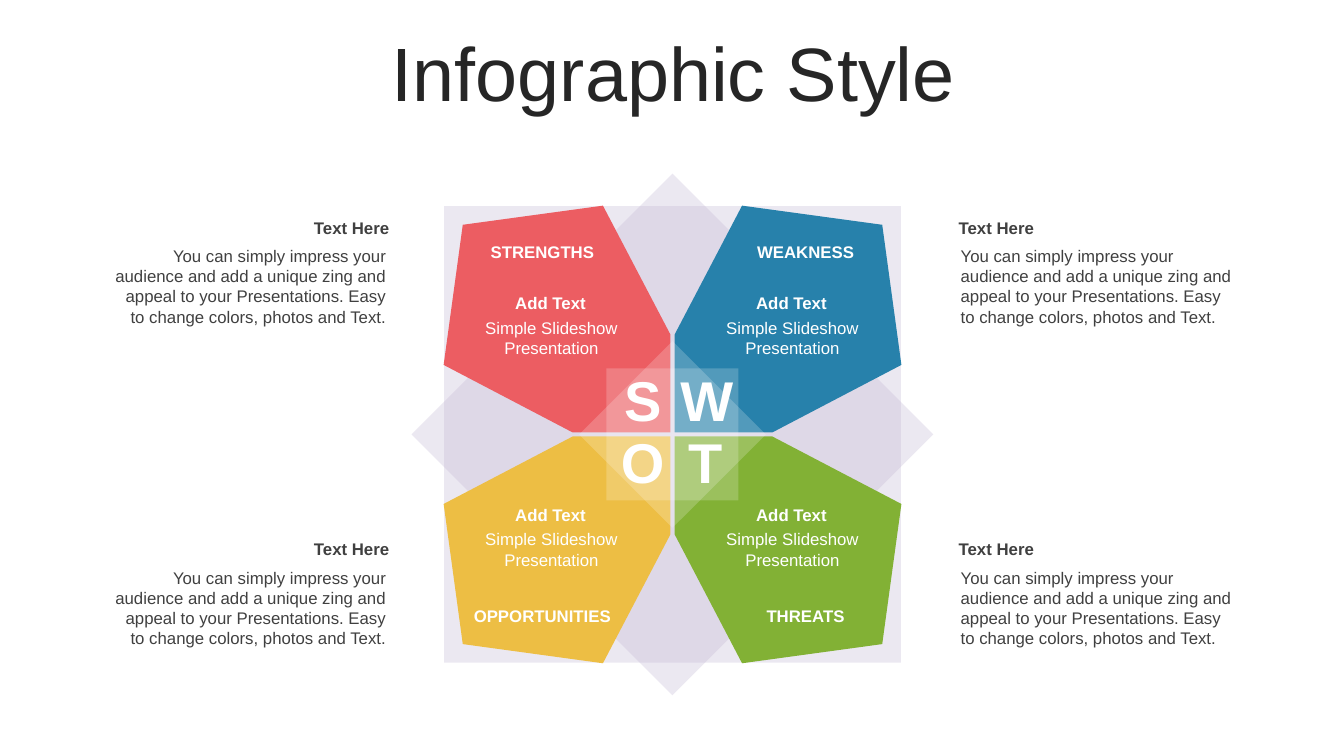
"""Build the SWOT infographic slide."""
from lxml import etree
from pptx import Presentation
from pptx.dml.color import RGBColor
from pptx.enum.shapes import MSO_SHAPE as Shape
from pptx.enum.text import MSO_ANCHOR as Anchor, MSO_AUTO_SIZE as AutoSize, PP_ALIGN as Align
from pptx.oxml.ns import qn
from pptx.util import Inches, Pt

TITLE = "Infographic Style"
CAPTION = ("Add Text", "Simple Slideshow Presentation")
SIDE_NOTE = (
    "Text Here",
    "You can simply impress your audience and add a unique zing and appeal "
    "to your Presentations. Easy to change colors, photos and Text.",
)
# letter, label, label center x, column, row, petal color
QUADRANTS = [
    ("S", "STRENGTHS", 5.38, 0, 0, "EC5D62"),
    ("W", "WEAKNESS", 7.99, 1, 0, "2781AB"),
    ("T", "THREATS", 7.99, 1, 1, "82B135"),
    ("O", "OPPORTUNITIES", 5.38, 0, 1, "EDBE44"),
]
PETAL = [(2.08, 2.08), (0.69, 2.27), (0.02, 0.99), (0.02, 0.02), (0.99, 0.02), (2.27, 0.69)]
CENTER_X, CENTER_Y = 6.67, 4.31
LABEL_TOPS = (2.35, 5.96)
LETTER_LEFTS, LETTER_TOPS = (6.03, 6.65), (3.58, 4.19)
CAPTION_LEFTS, CAPTION_TOPS = (4.52, 6.91), (2.86, 4.96)
NOTE_LEFTS, NOTE_TOPS = (0.95, 9.41), (2.11, 5.30)
NOTE_ALIGNS = (Align.RIGHT, Align.LEFT)
WHITE, LILAC, GRAY, INK = "FFFFFF", "C0B4D3", "404040", "262626"


def paint(shape, color, opacity=100):
    """Fill a shape with a flat color and no outline or shadow."""
    shape.shadow.inherit = False
    shape.line.fill.background()
    shape.fill.solid()
    shape.fill.fore_color.rgb = RGBColor.from_string(color)
    if opacity < 100:
        color_element = shape.fill._xPr.find(qn("a:solidFill"))[0]
        etree.SubElement(color_element, qn("a:alpha"), val=str(opacity * 1000))


def write(shape, text, size, color, align=Align.CENTER, bold=False):
    """Put one formatted paragraph in a shape."""
    frame = shape.text_frame
    frame.word_wrap = True
    frame.auto_size = AutoSize.NONE
    frame.text = text
    paragraph = frame.paragraphs[0]
    paragraph.alignment = align
    font = paragraph.runs[0].font
    font.name, font.size, font.bold = "Arial", Pt(size), bold
    font.color.rgb = RGBColor.from_string(color)
    return paragraph


def add_text(slide, left, top, width, height, *style, **options):
    """Add a formatted text box."""
    box = slide.shapes.add_textbox(Inches(left), Inches(top), Inches(width), Inches(height))
    write(box, *style, **options)


def add_star(slide, diamond_side, square_side, color, opacity):
    """Overlay a diamond and a square around the center."""
    for side, rotation in ((diamond_side, 315), (square_side, 0)):
        square = slide.shapes.add_shape(
            Shape.RECTANGLE, Inches(CENTER_X - side / 2), Inches(CENTER_Y - side / 2),
            Inches(side), Inches(side))
        square.rotation = rotation
        paint(square, color, opacity)


def add_petal(slide, column, row, color):
    """Mirror the petal outline into one quadrant."""
    points = [
        (Inches(CENTER_X + (2 * column - 1) * x), Inches(CENTER_Y + (2 * row - 1) * y))
        for x, y in PETAL
    ]
    builder = slide.shapes.build_freeform(*points[0])
    builder.add_line_segments(points[1:], close=True)
    paint(builder.convert_to_shape(), color)


def main():
    """Compose and save the slide."""
    presentation = Presentation()
    presentation.slide_width, presentation.slide_height = Inches(13.33), Inches(7.5)
    slide = presentation.slides.add_slide(presentation.slide_layouts[5])

    title = slide.shapes.title
    title.left, title.top = Inches(0.35), Inches(0.37)
    title.width, title.height = Inches(12.66), Inches(0.79)
    write(title, TITLE, 54, INK).line_spacing = 0.9
    title.text_frame.vertical_anchor = Anchor.MIDDLE

    add_star(slide, 3.66, 4.53, LILAC, 30)
    for _, _, _, column, row, color in QUADRANTS:
        add_petal(slide, column, row, color)
    add_star(slide, 1.31, 1.31, WHITE, 20)

    heading, body = CAPTION
    note_heading, note_body = SIDE_NOTE
    for letter, label, label_x, column, row, _ in QUADRANTS:
        add_text(slide, LETTER_LEFTS[column], LETTER_TOPS[row], 0.69, 0.77,
                 letter, 40, WHITE, bold=True)
        add_text(slide, label_x - 1, LABEL_TOPS[row], 2, 0.3, label, 12, WHITE, bold=True)

        left, top = CAPTION_LEFTS[column], CAPTION_TOPS[row]
        add_text(slide, left, top, 1.88, 0.3, heading, 12, WHITE, bold=True)
        add_text(slide, left + 0.01, top + 0.24, 1.88, 0.5, body, 12, WHITE)

        left, top, align = NOTE_LEFTS[column], NOTE_TOPS[row], NOTE_ALIGNS[column]
        add_text(slide, left, top, 3.01, 0.3, note_heading, 12, GRAY, align, bold=True)
        add_text(slide, left + 0.02, top + 0.28, 2.96, 0.91, note_body, 12, GRAY, align)

    presentation.save("out.pptx")


if __name__ == "__main__":
    main()
